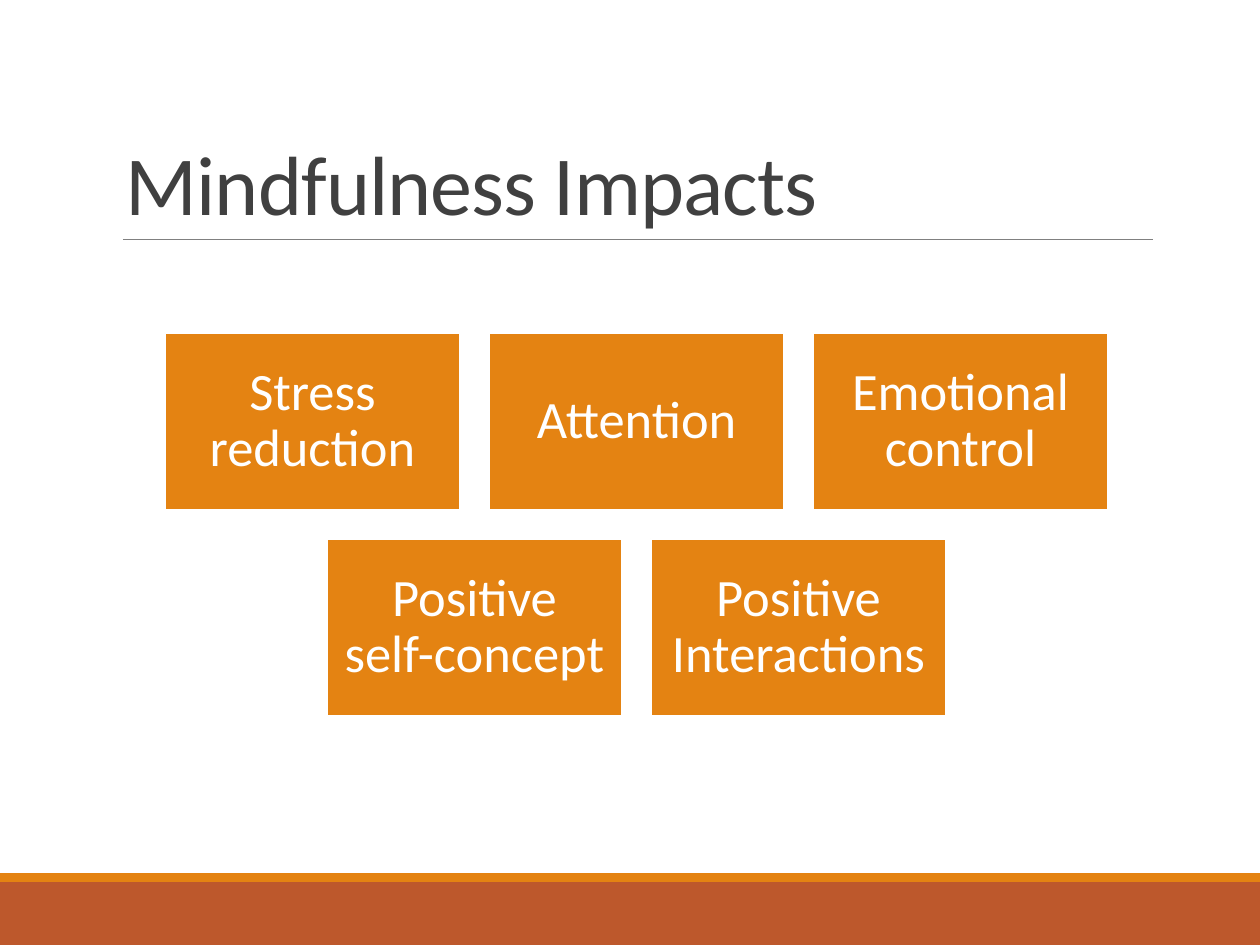
from dataclasses import dataclass

from lxml import etree
from pptx import Presentation
from pptx.dml.color import RGBColor
from pptx.enum.shapes import MSO_CONNECTOR, MSO_SHAPE
from pptx.enum.text import MSO_ANCHOR, MSO_AUTO_SIZE, PP_ALIGN
from pptx.oxml.ns import qn
from pptx.util import Emu, Pt

RECTANGLE = MSO_SHAPE.RECTANGLE
STRAIGHT = MSO_CONNECTOR.STRAIGHT
LEFT, CENTER = PP_ALIGN.LEFT, PP_ALIGN.CENTER
BOTTOM, MIDDLE = MSO_ANCHOR.BOTTOM, MSO_ANCHOR.MIDDLE
NO_AUTOFIT = MSO_AUTO_SIZE.NONE
TITLE_ONLY_LAYOUT = 5


@dataclass(frozen=True)
class Theme:
    font: str = "Calibri"
    title_size: int = 48
    box_size: int = 30
    title: RGBColor = RGBColor(0x40, 0x40, 0x40)
    rule: RGBColor = RGBColor(0x80, 0x80, 0x80)
    orange: RGBColor = RGBColor(0xE4, 0x83, 0x12)
    rust: RGBColor = RGBColor(0xBD, 0x58, 0x2C)
    white: RGBColor = RGBColor(0xFF, 0xFF, 0xFF)


@dataclass(frozen=True)
class Area:
    left: int
    top: int
    width: int
    height: int


THEME = Theme()
PX_PER_INCH = 126
SLIDE = Area(0, 0, 1260, 945)
TITLE = Area(113, 39, 1040, 200)
BANDS = [
    (Area(0, 882, SLIDE.width, 63), THEME.rust),
    (Area(0, 873, SLIDE.width, 9), THEME.orange),
]

# Impact boxes: every row is centred on the same axis
IMPACT_ROWS = [
    ["Stress reduction", "Attention", "Emotional control"],
    ["Positive self-concept", "Positive Interactions"],
]
BOX_WIDTH, BOX_HEIGHT, BOX_GAP = 295, 177, 29
GRID_CENTER, GRID_TOP = 636, 333
BOX_INSET = 15


def px(length: int) -> Emu:
    return Emu(round(length * 914400 / PX_PER_INCH))


def place(area: Area) -> tuple[Emu, Emu, Emu, Emu]:
    return px(area.left), px(area.top), px(area.width), px(area.height)


def add_rectangle(slide, area: Area, fill: RGBColor):
    shape = slide.shapes.add_shape(RECTANGLE, *place(area))
    shape.shadow.inherit = False
    shape.fill.solid()
    shape.fill.fore_color.rgb = fill
    shape.line.fill.background()
    return shape


def format_paragraph(paragraph, size: int, color: RGBColor, align, spacing: float) -> None:
    paragraph.alignment = align
    paragraph.line_spacing = spacing
    paragraph.font.name = THEME.font
    paragraph.font.size = Pt(size)
    paragraph.font.color.rgb = color


def add_title(slide, text: str) -> None:
    title = slide.shapes.title
    title.left, title.top, title.width, title.height = place(TITLE)
    frame = title.text_frame
    frame.text = text
    frame.auto_size = NO_AUTOFIT
    frame.vertical_anchor = BOTTOM
    paragraph = frame.paragraphs[0]
    format_paragraph(paragraph, THEME.title_size, THEME.title, LEFT, 0.85)
    # Slightly tightened letter spacing, in hundredths of a point
    paragraph.runs[0].font._element.set("spc", "-50")


def add_rule(slide, left: int, right: int, top: int) -> None:
    rule = slide.shapes.add_connector(STRAIGHT, px(left), px(top), px(right), px(top))
    rule.line.color.rgb = THEME.rule
    rule.line.width = Pt(0.5)
    etree.SubElement(rule._element.spPr, qn("a:effectLst"))


def add_impact_box(slide, area: Area, text: str) -> None:
    box = add_rectangle(slide, area, THEME.orange)
    box.line.color.rgb = THEME.white
    box.line.width = Pt(1.25)
    frame = box.text_frame
    frame.text = text
    frame.word_wrap = True
    frame.vertical_anchor = MIDDLE
    frame.margin_left = frame.margin_right = px(BOX_INSET)
    frame.margin_top = frame.margin_bottom = px(BOX_INSET)
    format_paragraph(frame.paragraphs[0], THEME.box_size, THEME.white, CENTER, 0.9)


def add_impact_rows(slide) -> None:
    for row, labels in enumerate(IMPACT_ROWS):
        row_width = len(labels) * (BOX_WIDTH + BOX_GAP) - BOX_GAP
        row_left = GRID_CENTER - row_width // 2
        top = GRID_TOP + row * (BOX_HEIGHT + BOX_GAP)
        for column, label in enumerate(labels):
            left = row_left + column * (BOX_WIDTH + BOX_GAP)
            add_impact_box(slide, Area(left, top, BOX_WIDTH, BOX_HEIGHT), label)


def main() -> None:
    presentation = Presentation()
    presentation.slide_width = px(SLIDE.width)
    presentation.slide_height = px(SLIDE.height)
    slide = presentation.slides.add_slide(presentation.slide_layouts[TITLE_ONLY_LAYOUT])

    # Footer bands and the rule under the title
    for area, color in BANDS:
        add_rectangle(slide, area, color)
    add_rule(slide, 123, 1153, 239)

    # Title and content
    add_title(slide, "Mindfulness Impacts")
    add_impact_rows(slide)
    presentation.save("out.pptx")


if __name__ == "__main__":
    main()
